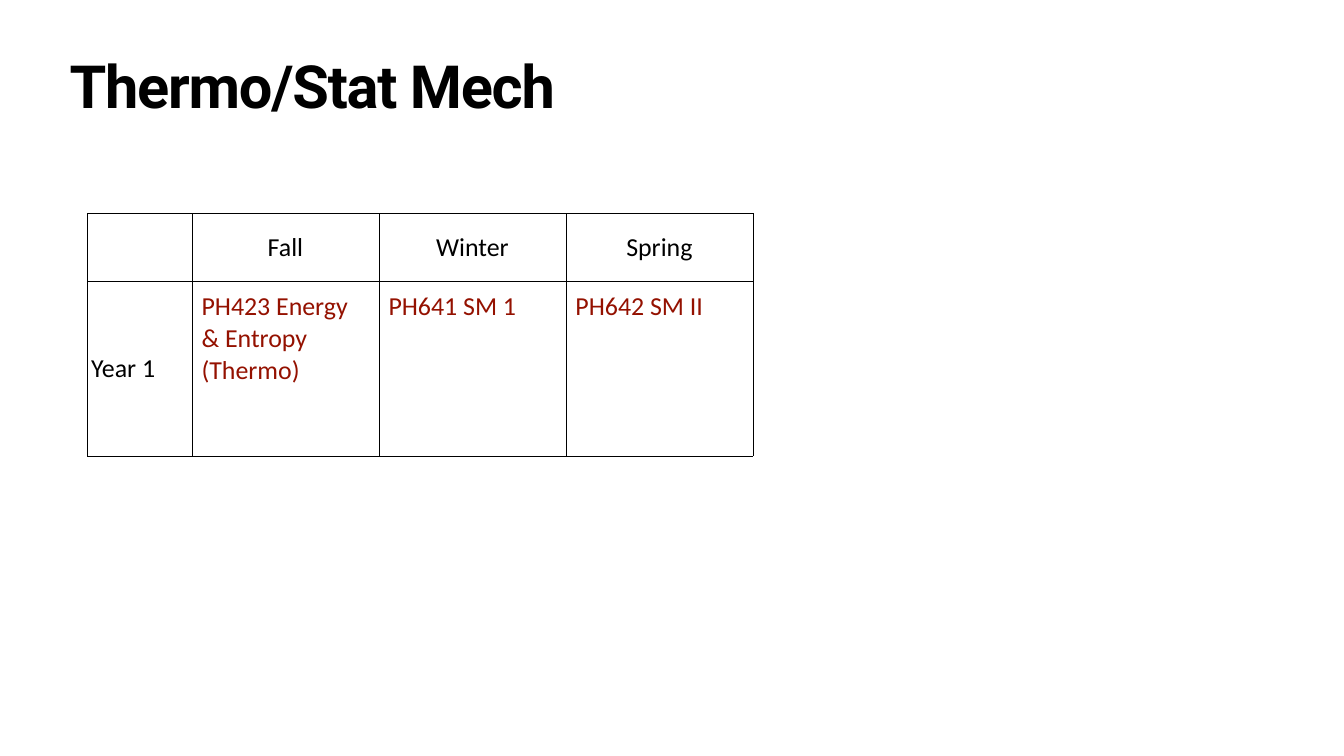
from lxml.etree import SubElement
from pptx import Presentation
from pptx.dml.color import RGBColor
from pptx.enum.text import MSO_ANCHOR, PP_ALIGN
from pptx.oxml import parse_xml
from pptx.oxml.ns import nsdecls, qn
from pptx.util import Inches, Pt

THEME = {
    "title": {"name": "Roboto", "size": Pt(85), "bold": True, "color": "000000"},
    "label": {"name": "Calibri", "size": Pt(37), "bold": False, "color": "000000"},
    "course": {"name": "Calibri", "size": Pt(37), "bold": False, "color": "941100"},
    "border": "000000",
}

TITLE = "Thermo/Stat Mech"
ROWS = [
    ["", "Fall", "Winter", "Spring"],
    ["Year 1", "PH423 Energy & Entropy (Thermo)", "PH641 SM 1", "PH642 SM II"],
]
COL_WIDTHS = [2.07] + [3.71] * 3
ROW_HEIGHTS = [1.35, 3.46]


def set_attrs(obj, values):
    for name, value in values.items():
        setattr(obj, name, value)


def margins(x, y):
    return {"margin_left": Inches(x), "margin_right": Inches(x),
            "margin_top": Inches(y), "margin_bottom": Inches(y)}


def add_run(p, text, style):
    r = p.add_run()
    r.text = text
    for name, value in THEME[style].items():
        if name == "color":
            r.font.color.rgb = RGBColor.from_string(value)
        else:
            setattr(r.font, name, value)
    return r


def add_borders(cell):
    """Draw a 1 pt line on all four sides; lines must precede the cell fill."""
    tc_pr = cell._tc.get_or_add_tcPr()
    for i, side in enumerate(("lnL", "lnR", "lnT", "lnB")):
        ln = parse_xml(f'<a:{side} {nsdecls("a")} w="{Pt(1)}"/>')
        fill = SubElement(ln, qn("a:solidFill"))
        SubElement(fill, qn("a:srgbClr"), val=THEME["border"])
        tc_pr.insert(i, ln)


def add_title(slide):
    box = slide.shapes.add_textbox(Inches(1.32), Inches(1.18), Inches(24.03), Inches(1.57))
    tf = box.text_frame
    set_attrs(tf, {"word_wrap": True, **margins(0.06, 0.06)})
    p = tf.paragraphs[0]
    p.line_spacing = 0.8
    r = add_run(p, TITLE, "title")
    r.font._element.set("spc", "-170")


def add_schedule(slide):
    table = slide.shapes.add_table(
        len(ROWS), len(COL_WIDTHS), Inches(1.74), Inches(4.24),
        Inches(sum(COL_WIDTHS)), Inches(sum(ROW_HEIGHTS))).table
    set_attrs(table, {"first_row": False, "horz_banding": False})
    for col, width in zip(table.columns, COL_WIDTHS):
        col.width = Inches(width)
    for row, height in zip(table.rows, ROW_HEIGHTS):
        row.height = Inches(height)

    for i, texts in enumerate(ROWS):
        for j, text in enumerate(texts):
            cell = table.cell(i, j)
            is_course = i > 0 and j > 0
            cell.fill.background()
            add_borders(cell)
            set_attrs(cell, margins(0.19, 0.19) if is_course else margins(0.07, 0))
            cell.vertical_anchor = MSO_ANCHOR.TOP if is_course else MSO_ANCHOR.MIDDLE
            p = cell.text_frame.paragraphs[0]
            p.alignment = PP_ALIGN.CENTER if i == 0 else PP_ALIGN.LEFT
            if text:
                add_run(p, text, "course" if is_course else "label")


def main():
    prs = Presentation()
    set_attrs(prs, {"slide_width": Inches(26.67), "slide_height": Inches(15)})
    slide = prs.slides.add_slide(prs.slide_layouts[6])
    add_title(slide)
    add_schedule(slide)
    prs.save("out.pptx")


if __name__ == "__main__":
    main()
